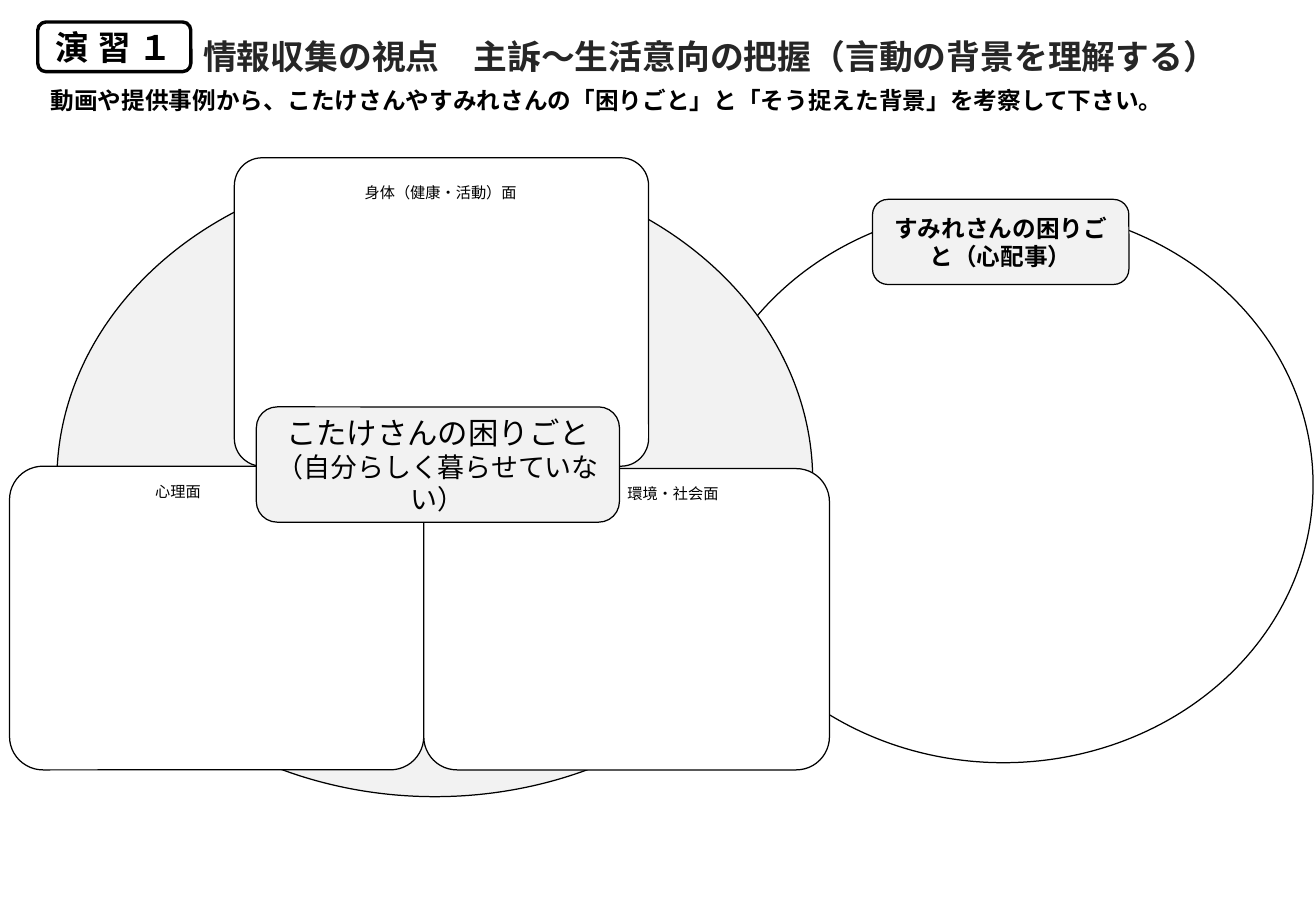
from lxml.etree import SubElement
from pptx import Presentation
from pptx.dml.color import RGBColor
from pptx.enum.shapes import MSO_SHAPE
from pptx.enum.text import MSO_ANCHOR, MSO_AUTO_SIZE, PP_ALIGN
from pptx.oxml.ns import qn
from pptx.util import Cm, Pt

BLACK = RGBColor(0x00, 0x00, 0x00)
DARK = RGBColor(0x26, 0x26, 0x26)
GRAY = RGBColor(0xF2, 0xF2, 0xF2)
WHITE = RGBColor(0xFF, 0xFF, 0xFF)
GOTHIC, LATIN = "Noto Sans CJK JP", "Calibri"

TITLE = "情報収集の視点　主訴～生活意向の把握（言動の背景を理解する）"
TITLE_BOX = (3.99, 0.2, 22, 1.37)
TASK = "動画や提供事例から、こたけさんやすみれさんの「困りごと」と「そう捉えた背景」を考察して下さい。"
TASK_BOX = (0.81, 1.68, 25.96, 0.86)
BADGE = "演 習 １"
BADGE_BOX = (0.79, 0.46, 3.2, 1.04)

CIRCLES = [
    ((14.5, 4.32, 12.95, 11.63), WHITE),
    ((1.19, 3.43, 15.8, 13.23), GRAY),
]
PANELS = [
    ((0.2, 9.75, 8.66, 6.35), 0.11),
    ((8.86, 9.8, 8.48, 6.3), 0.11),
    ((4.9, 3.3, 8.66, 6.45), 0.09),
]
PANEL_LABELS = [
    ("身体（健康・活動）面", (5.54, 3.63, 7.34, 1.14), PP_ALIGN.CENTER),
    ("心理面", (0.05, 9.88, 7.34, 1.14), PP_ALIGN.CENTER),
    ("環境・社会面", (9.78, 9.91, 5.49, 1.14), PP_ALIGN.RIGHT),
]
WORRIES = [
    ((5.36, 8.51, 7.59, 2.41), False,
     [("こたけさんの困りごと", 18), ("（自分らしく暮らせていない）", 16)]),
    ((18.24, 4.17, 5.36, 1.78), True, [("すみれさんの困りごと（心配事）", 14)]),
]


def write(sp, lines, font, color=BLACK, bold=False, align=PP_ALIGN.LEFT,
          anchor=MSO_ANCHOR.TOP, spacing=None):
    """Fill a shape with (text, size) lines in one style."""
    tf = sp.text_frame
    tf.word_wrap = True
    tf.auto_size = MSO_AUTO_SIZE.NONE
    tf.vertical_anchor = anchor
    tf.text = "\n".join(text for text, size in lines)
    for p, (text, size) in zip(tf.paragraphs, lines):
        p.alignment = align
        p.line_spacing = spacing
        for r in p.runs:
            r.font.size = Pt(size)
            r.font.bold = bold
            r.font.color.rgb = color
            r.font.name = font
            SubElement(r.font._element, qn("a:ea"), typeface=font)


def add_outline(s, kind, box, fill, radius=None, weight=0.75):
    """Add a filled shape with a black outline."""
    sp = s.shapes.add_shape(kind, *map(Cm, box))
    sp.shadow.inherit = False
    sp.fill.solid()
    sp.fill.fore_color.rgb = fill
    sp.line.color.rgb = BLACK
    sp.line.width = Pt(weight)
    if radius is not None:
        sp.adjustments[0] = radius
    return sp


def main():
    """Build the exercise slide."""
    prs = Presentation()
    prs.slide_width, prs.slide_height = Cm(27.51), Cm(19.05)
    s = prs.slides.add_slide(prs.slide_layouts[5])

    title = s.shapes.title
    title.left, title.top, title.width, title.height = map(Cm, TITLE_BOX)
    write(title, [(TITLE, 20)], GOTHIC, DARK, True, spacing=1.5)

    for box, fill in CIRCLES:
        add_outline(s, MSO_SHAPE.OVAL, box, fill)

    task = s.shapes.add_textbox(*map(Cm, TASK_BOX))
    write(task, [(TASK, 14)], GOTHIC, bold=True)

    for box, radius in PANELS:
        add_outline(s, MSO_SHAPE.ROUNDED_RECTANGLE, box, WHITE, radius)

    for box, bold, lines in WORRIES:
        sp = add_outline(s, MSO_SHAPE.ROUNDED_RECTANGLE, box, GRAY, 0.18)
        write(sp, lines, LATIN, bold=bold, align=PP_ALIGN.CENTER, anchor=MSO_ANCHOR.MIDDLE)

    for text, box, align in PANEL_LABELS:
        label = s.shapes.add_textbox(*map(Cm, box))
        write(label, [(text, 9)], GOTHIC, align=align, spacing=Pt(13.2))

    badge = add_outline(s, MSO_SHAPE.ROUNDED_RECTANGLE, BADGE_BOX, WHITE, weight=2)
    write(badge, [(BADGE, 20)], GOTHIC, bold=True, align=PP_ALIGN.CENTER,
          anchor=MSO_ANCHOR.MIDDLE)

    prs.save("out.pptx")


if __name__ == "__main__":
    main()
